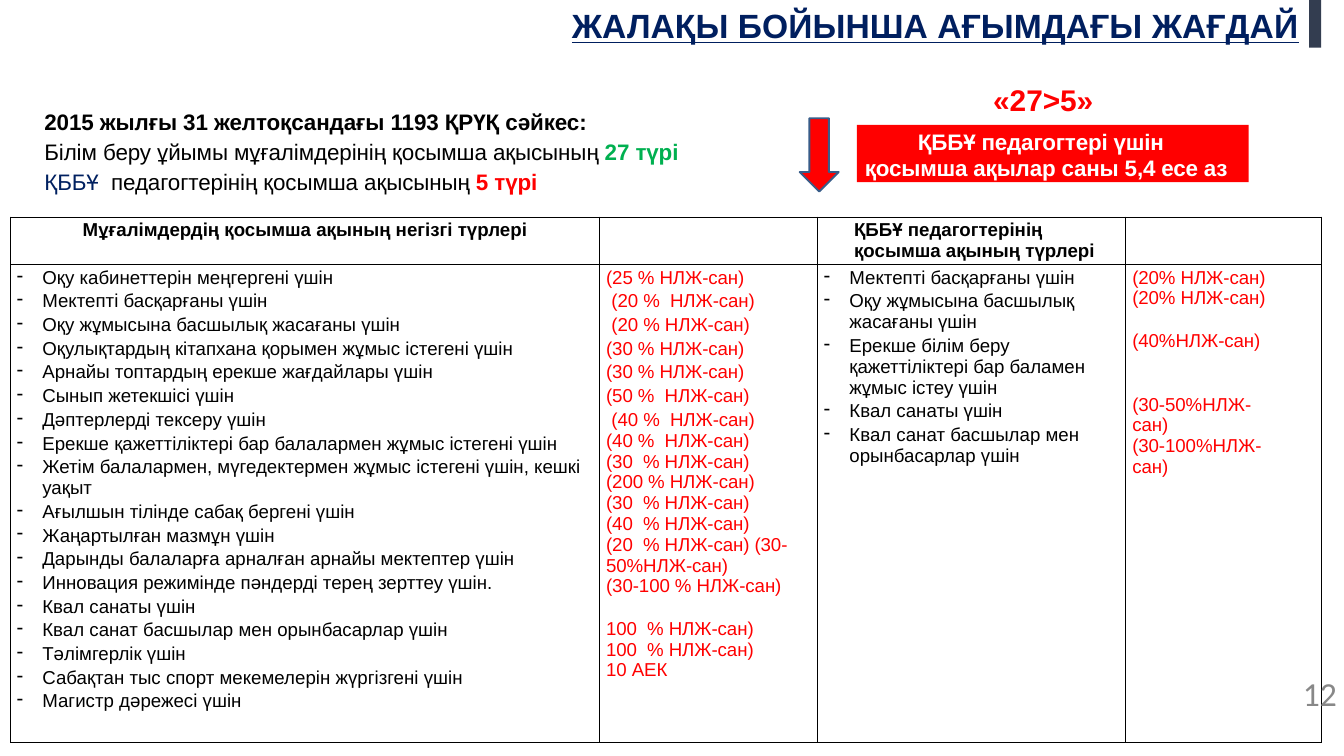
from lxml.etree import SubElement
from pptx import Presentation
from pptx.dml.color import RGBColor
from pptx.enum.shapes import MSO_SHAPE as Shape
from pptx.enum.text import MSO_ANCHOR as Anchor, PP_ALIGN as Align
from pptx.oxml.ns import qn
from pptx.util import Inches, Pt

# ---- Content ----
COLORS = {"black": "000000", "red": "FF0000", "green": "00B050", "navy": "002060",
          "title": "001F5F", "white": "FFFFFF", "bar": "333D50",
          "outline": "385D89", "gray": "888888"}
TITLE = "ЖАЛАҚЫ БОЙЫНША АҒЫМДАҒЫ ЖАҒДАЙ"
RATIO = "«27˃5»"
CALLOUT = "ҚББҰ педагогтері үшін қосымша ақылар саны 5,4 есе аз"
PAGE_NUMBER = "12"
# Each line is a list of (text, colour, bold)
INTRO = [
    [("2015 жылғы 31 желтоқсандағы 1193 ҚРҮҚ сәйкес:", "black", True)],
    [("Білім беру ұйымы мұғалімдерінің қосымша ақысының ", "black", False),
     ("27 түрі", "green", True)],
    [("ҚББҰ  ", "navy", False), ("педагогтерінің қосымша ақысының ", "black", False),
     ("5 түрі", "red", True)],
]
TEACHER_HEAD = "Мұғалімдердің қосымша ақының негізгі түрлері"
SPECIAL_HEAD = "ҚББҰ педагогтерінің қосымша ақының түрлері"
TEACHER_ITEMS = [
    "Оқу кабинеттерін меңгергені үшін",
    "Мектепті басқарғаны үшін",
    "Оқу жұмысына басшылық жасағаны үшін",
    "Оқулықтардың кітапхана қорымен жұмыс істегені үшін",
    "Арнайы топтардың ерекше жағдайлары үшін",
    "Сынып жетекшісі үшін",
    "Дәптерлерді тексеру үшін",
    "Ерекше қажеттіліктері бар балалармен жұмыс істегені үшін",
    "Жетім балалармен, мүгедектермен жұмыс істегені үшін, кешкі уақыт",
    "Ағылшын тілінде сабақ бергені үшін",
    "Жаңартылған мазмұн үшін",
    "Дарынды балаларға арналған арнайы мектептер үшін",
    "Инновация режимінде пәндерді терең зерттеу үшін.",
    "Квал санаты үшін",
    "Квал санат басшылар мен орынбасарлар үшін",
    "Тәлімгерлік үшін",
    "Сабақтан тыс спорт мекемелерін жүргізгені үшін",
    "Магистр дәрежесі үшін",
]
SPECIAL_ITEMS = [
    "Мектепті басқарғаны үшін",
    "Оқу жұмысына басшылық жасағаны үшін",
    "Ерекше білім беру қажеттіліктері бар баламен жұмыс істеу үшін",
    "Квал санаты үшін",
    "Квал санат басшылар мен орынбасарлар үшін",
]
GAP, LINE = 3.1, 23      # points: item gap, one line of 20 pt text
EDGE, SHIFTED = 0.1, 0.18  # inches: indents of the rates
# Each rate is (text, space before, indent)
TEACHER_RATES = [
    ("(25 % НЛЖ-сан)", 0, EDGE),
    ("(20 %  НЛЖ-сан)", GAP, SHIFTED),
    ("(20 % НЛЖ-сан)", GAP, SHIFTED),
    ("(30 % НЛЖ-сан)", GAP, EDGE),
    ("(30 % НЛЖ-сан)", GAP, EDGE),
    ("(50 %  НЛЖ-сан)", GAP, EDGE),
    ("(40 %  НЛЖ-сан)", GAP, SHIFTED),
    ("(40 %  НЛЖ-сан)", 0, EDGE),
    ("(30  % НЛЖ-сан)", 0, EDGE),
    ("(200 % НЛЖ-сан)", 0, EDGE),
    ("(30  % НЛЖ-сан)", 0, EDGE),
    ("(40  % НЛЖ-сан)", 0, EDGE),
    ("(20  % НЛЖ-сан) (30-50%НЛЖ-сан)", 0, EDGE),
    ("(30-100 % НЛЖ-сан)", 0, EDGE),
    ("100  % НЛЖ-сан)", LINE, EDGE),
    ("100  % НЛЖ-сан)", 0, EDGE),
    ("10 АЕК", 0, EDGE),
]
SPECIAL_RATES = [
    ("(20% НЛЖ-сан)", 0, EDGE),
    ("(20% НЛЖ-сан)", 0, EDGE),
    ("(40%НЛЖ-сан)", LINE, EDGE),
    ("(30-50%НЛЖ-сан)", 2 * LINE, EDGE),
    ("(30-100%НЛЖ-сан)", 0, EDGE),
]
COLUMNS, ROWS = [8.76, 3.25, 4.58, 2.91], [0.7, 7.09]


# ---- Helpers ----
def color(name):
    return RGBColor.from_string(COLORS[name])


def indent(para, left, first=0):
    props = para._p.get_or_add_pPr()
    props.set("marL", str(Inches(left)))
    props.set("indent", str(Inches(first)))


def style(span, size, tint, bold=False, spacing=0, name="Arial"):
    span.font.size, span.font.bold, span.font.name = Pt(size), bold, name
    span.font.color.rgb = color(tint)
    if spacing:
        span._r.get_or_add_rPr().set("spc", str(round(spacing * 100)))


def set_frame(frame, top):
    frame.word_wrap = True
    frame.margin_left = frame.margin_right = frame.margin_bottom = 0
    frame.margin_top = Inches(top)
    frame.vertical_anchor = Anchor.TOP


def add_text(page, place, text, top=0.01, left=0.01, **look):
    box = page.shapes.add_textbox(*map(Inches, place))
    set_frame(box.text_frame, top)
    box.text_frame.text = text
    para = box.text_frame.paragraphs[0]
    indent(para, left)
    style(para.runs[0], **look)
    return para


def add_block(page, kind, place, fill, line=None):
    block = page.shapes.add_shape(kind, *map(Inches, place))
    block.shadow.inherit = False
    block.fill.solid()
    block.fill.fore_color.rgb = color(fill)
    if line:
        block.line.color.rgb = color(line)
        block.line.width = Pt(2)
    else:
        block.line.fill.background()
    return block


def fill_cell(cell, lines, tint="black", bold=False, first=0, bullet=False):
    cell.text_frame.text = "\n".join(text for text, *_ in lines)
    for para, (_, before, left) in zip(cell.text_frame.paragraphs, lines):
        indent(para, left, first)
        if bullet:
            SubElement(para._p.get_or_add_pPr(), qn("a:buChar")).set("char", "-")
        para.space_before = Pt(before)
        style(para.runs[0], 20, tint, bold, -0.1 if tint == "red" else 0)


def outline_cell(cell):
    props = cell._tc.get_or_add_tcPr()
    for side in ("a:lnL", "a:lnR", "a:lnT", "a:lnB"):
        line = SubElement(props, qn(side))
        line.set("w", str(Pt(1)))
        solid = SubElement(line, qn("a:solidFill"))
        SubElement(solid, qn("a:srgbClr")).set("val", COLORS["black"])
    cell.fill.background()


def bullets(items):
    return [(text, GAP if place else 0, 0.47) for place, text in enumerate(items)]


# ---- Page ----
deck = Presentation()
deck.slide_width, deck.slide_height = Inches(20), Inches(11.25)
page = deck.slides.add_slide(deck.slide_layouts[6])

# Introduction
box = page.shapes.add_textbox(*map(Inches, (0.15, 1.56, 10.43, 1.34)))
set_frame(box.text_frame, 0.05)
for number, line in enumerate(INTRO):
    para = box.text_frame.add_paragraph() if number else box.text_frame.paragraphs[0]
    indent(para, 0.51)
    para.space_before = Pt(3.4 if number else 0)
    for text, tint, bold in line:
        span = para.add_run()
        span.text = text
        style(span, 24, tint, bold, -0.1)

# Table of extra payments
table = page.shapes.add_table(2, 4, Inches(0.16), Inches(3.23),
                              Inches(sum(COLUMNS)), Inches(sum(ROWS))).table
table.first_row = table.horz_banding = False
for column, width in zip(table.columns, COLUMNS):
    column.width = Inches(width)
for row, height in zip(table.rows, ROWS):
    row.height = Inches(height)
for cell in table.iter_cells():
    cell.margin_left = cell.margin_right = cell.margin_bottom = 0
    cell.margin_top = Inches(0.04)
    outline_cell(cell)
fill_cell(table.cell(0, 0), [(TEACHER_HEAD, 0, 0)], bold=True)
table.cell(0, 0).text_frame.paragraphs[0].alignment = Align.CENTER
fill_cell(table.cell(0, 2), [(SPECIAL_HEAD, 0, 0.54)], bold=True)
for column, items in ((0, TEACHER_ITEMS), (2, SPECIAL_ITEMS)):
    fill_cell(table.cell(1, column), bullets(items), first=-0.38, bullet=True)
for column, rates in ((1, TEACHER_RATES), (3, SPECIAL_RATES)):
    fill_cell(table.cell(1, column), rates, "red")
table.cell(1, 3).margin_right = Inches(0.7)

# Callout with its arrow and ratio
callout = add_block(page, Shape.RECTANGLE, (12.75, 1.86, 5.83, 0.85), "red")
set_frame(callout.text_frame, 0.04)
callout.text_frame.text = CALLOUT
para = callout.text_frame.paragraphs[0]
para.alignment = Align.LEFT
indent(para, 0.12, 0.79)
style(para.runs[0], 24, "white", True, -0.2)
add_block(page, Shape.DOWN_ARROW, (11.9, 1.76, 0.58, 1.09), "red", "outline")
add_text(page, (14.77, 1.21, 1.52, 0.56), RATIO, size=32, tint="red", bold=True,
         spacing=-0.1)

# Title, corner bar and page number
para = add_text(page, (8.5, 0.07, 11.74, 0.63), TITLE, size=36, tint="title",
                bold=True, spacing=0.1)
para.runs[0].font.underline = True
add_block(page, Shape.RECTANGLE, (19.48, 0, 0.18, 0.71), "bar")
para = add_text(page, (19.35, 10.08, 0.76, 0.58), PAGE_NUMBER, top=0, left=0.04,
                size=36, tint="gray", name="Calibri")
para.line_spacing = Pt(38.2)

deck.save("out.pptx")
